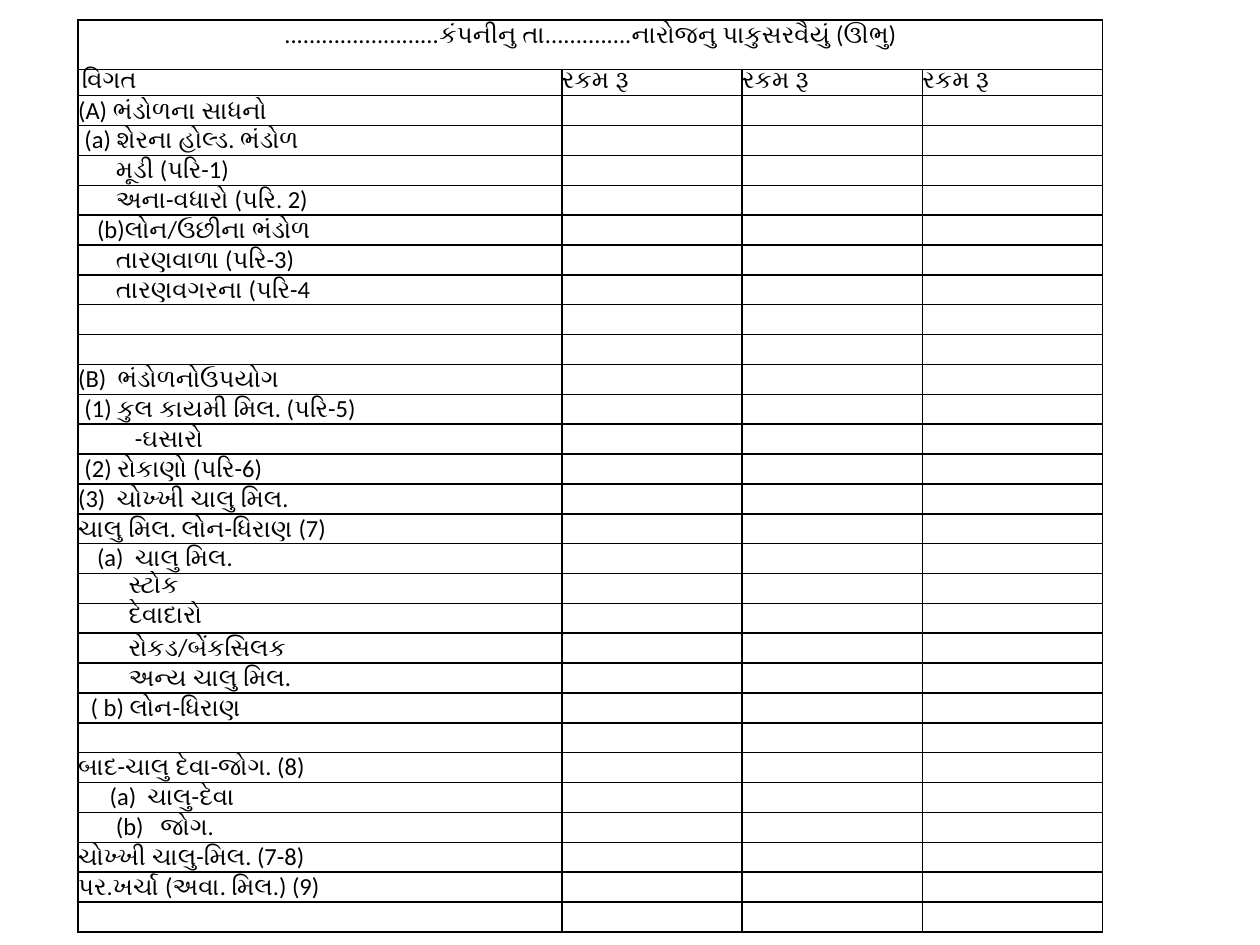
import pptx
import pptx.util
import pptx.dml.color
import pptx.enum.text
import pptx.oxml.ns
import lxml.etree

COLORS = {"ink": "000000"}
FONT = "Calibri"
SIZE = 14
STEP = 0.05
COLS = [3.84, 1.43, 1.43, 1.43]
HEAD, ROW = 0.39, 0.21
TITLE = ".........................કંપનીનુ તા..............નારોજનુ પાકુસરવૈયું (ઊભુ)"
LABELS = ["વિગત", "રકમ રૂ", "રકમ રૂ", "રકમ રૂ"]
ITEMS = [
    (0, "(A) ભંડોળના સાધનો"),
    (1, "(a) શેરના હોલ્ડ. ભંડોળ"),
    (6, "મૂડી (પરિ-1)"),
    (6, "અના-વધારો (પરિ. 2)"),
    (3, "(b)લોન/ઉછીના ભંડોળ"),
    (6, "તારણવાળા (પરિ-3)"),
    (6, "તારણવગરના (પરિ-4"),
    (0, ""),
    (0, ""),
    (0, "(B)  ભંડોળનોઉપયોગ"),
    (1, "(1) કુલ કાયમી મિલ. (પરિ-5)"),
    (9, "-ઘસારો"),
    (1, "(2) રોકાણો (પરિ-6)"),
    (0, "(3)  ચોખ્ખી ચાલુ મિલ."),
    (0, "ચાલુ મિલ. લોન-ધિરાણ (7)"),
    (3, "(a)  ચાલુ મિલ."),
    (8, "સ્ટોક"),
    (8, "દેવાદારો"),
    (8, "રોકડ/બેંકસિલક"),
    (8, "અન્ય ચાલુ મિલ."),
    (2, "( b) લોન-ધિરાણ"),
    (0, ""),
    (0, "બાદ-ચાલુ દેવા-જોગ. (8)"),
    (5, "(a)  ચાલુ-દેવા"),
    (6, "(b)   જોગ."),
    (0, "ચોખ્ખી ચાલુ-મિલ. (7-8)"),
    (0, "પર.ખર્ચા (અવા. મિલ.) (9)"),
    (0, ""),
]


def add_tag(node, name, **attrs):
    return lxml.etree.SubElement(node, pptx.oxml.ns.qn(name), **attrs)


def add_edges(cell):
    props = cell._tc.get_or_add_tcPr()
    for side in ("a:lnL", "a:lnR", "a:lnT", "a:lnB"):
        line = add_tag(props, side, w=str(pptx.util.Pt(1)))
        fill = add_tag(line, "a:solidFill")
        add_tag(fill, "a:srgbClr", val=COLORS["ink"])


def style_cell(cell):
    cell.margin_left = cell.margin_right = 0
    cell.margin_top = cell.margin_bottom = 0
    add_edges(cell)
    cell.fill.background()


def set_text(cell, text, indent=0):
    para = cell.text_frame.paragraphs[0]
    para.text = text
    if indent:
        para._p.get_or_add_pPr().set("marL", str(pptx.util.Inches(indent * STEP)))
    for run in para.runs:
        run.font.size = pptx.util.Pt(SIZE)
        run.font.name = FONT
        run.font.color.rgb = pptx.dml.color.RGBColor.from_string(COLORS["ink"])
    if not text:
        end = add_tag(para._p, "a:endParaRPr", sz=str(SIZE * 100))
        add_tag(end, "a:latin", typeface=FONT)
    return para


def add_grid(slide):
    count = len(ITEMS) + 2
    inch = pptx.util.Inches
    frame = slide.shapes.add_table(
        count, len(COLS), inch(0.62), inch(0.16),
        inch(sum(COLS)), inch(HEAD + ROW * (count - 1)))
    table = frame.table
    table.first_row = table.horz_banding = False
    for col, width in zip(table.columns, COLS):
        col.width = inch(width)
    for pos, row in enumerate(table.rows):
        row.height = inch(ROW if pos else HEAD)
        for cell in row.cells:
            style_cell(cell)
    return table


def fill_grid(table):
    head = table.cell(0, 0)
    head.merge(table.cell(0, len(COLS) - 1))
    set_text(head, TITLE).alignment = pptx.enum.text.PP_ALIGN.CENTER
    for col, label in enumerate(LABELS):
        set_text(table.cell(1, col), label)
    table.cell(1, 0).margin_left = pptx.util.Inches(0.03)
    for row, (indent, text) in enumerate(ITEMS, 2):
        set_text(table.cell(row, 0), text, indent)
        for col in range(1, len(COLS)):
            set_text(table.cell(row, col), "")


def main():
    deck = pptx.Presentation()
    deck.slide_width = pptx.util.Inches(10)
    deck.slide_height = pptx.util.Inches(7.5)
    slide = deck.slides.add_slide(deck.slide_layouts[6])
    fill_grid(add_grid(slide))
    deck.save("out.pptx")


if __name__ == "__main__":
    main()
